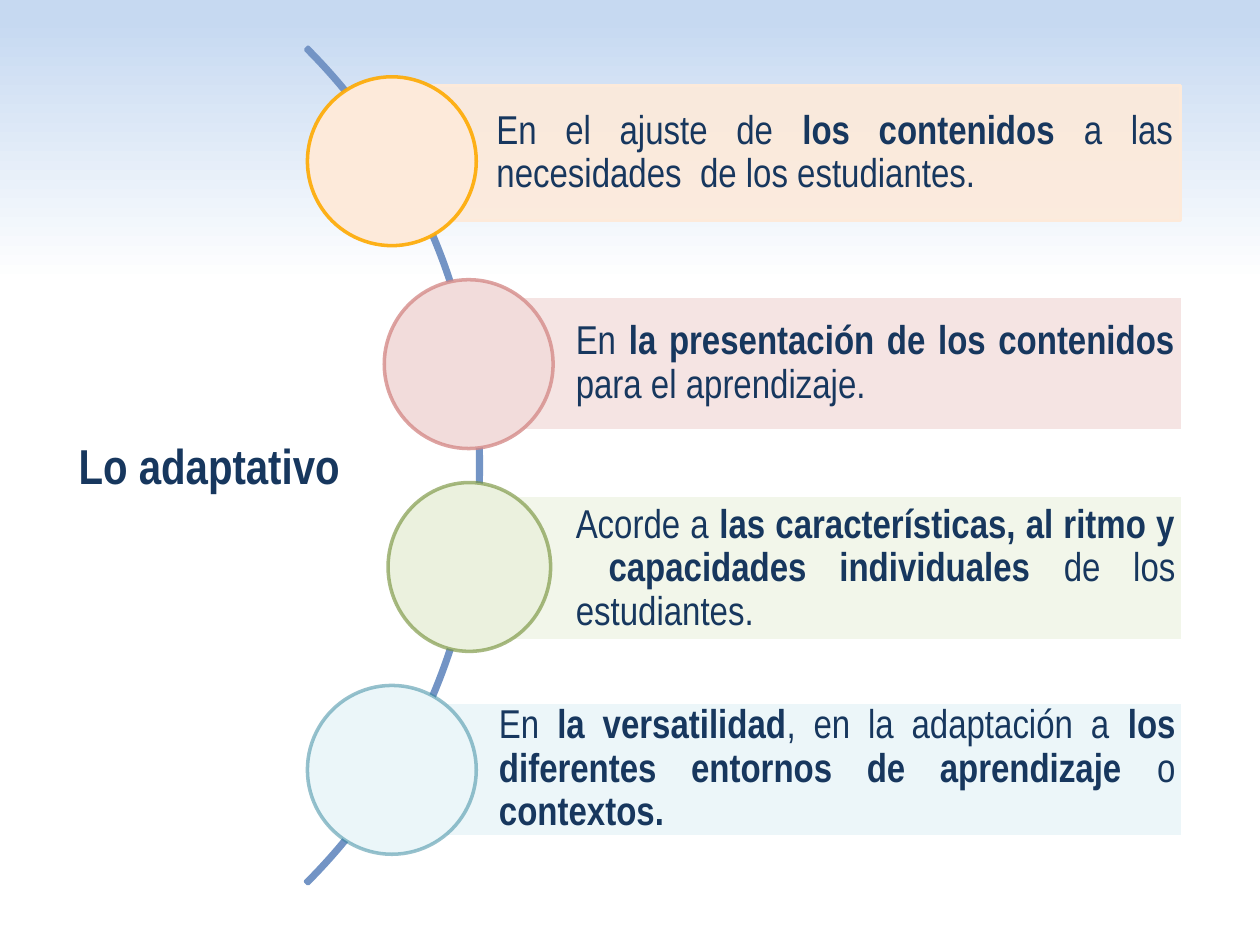
from lxml import etree
from pptx import Presentation
from pptx.dml.color import RGBColor
from pptx.enum.shapes import MSO_SHAPE
from pptx.enum.text import MSO_ANCHOR, PP_ALIGN
from pptx.oxml.ns import qn
from pptx.util import Inches, Pt

ARC, BAR, CIRCLE = MSO_SHAPE.BLOCK_ARC, MSO_SHAPE.RECTANGLE, MSO_SHAPE.OVAL
MIDDLE, BOTTOM = MSO_ANCHOR.MIDDLE, MSO_ANCHOR.BOTTOM
CENTER, JUSTIFY = PP_ALIGN.CENTER, PP_ALIGN.JUSTIFY

NAVY = RGBColor(0x17, 0x37, 0x5E)
SKY = RGBColor(0xC6, 0xD9, 0xF1)
WHITE = RGBColor(0xFF, 0xFF, 0xFF)
ARC_BLUE = RGBColor(0x73, 0x94, 0xC5)
PEACH = RGBColor(0xFD, 0xEA, 0xDA)
ORANGE = RGBColor(0xFE, 0xAA, 0x02)
PINK = RGBColor(0xF2, 0xDC, 0xDB)
RED = RGBColor(0xD4, 0x88, 0x86)
LIME = RGBColor(0xEB, 0xF1, 0xDE)
GREEN = RGBColor(0x77, 0x93, 0x3C)
ICE = RGBColor(0xDB, 0xEE, 0xF4)
PALE_ICE = RGBColor(0xEB, 0xF6, 0xF9)
TEAL = RGBColor(0x31, 0x85, 0x9C)

FIRST_CIRCLE_TOP, PITCH, DIAMETER = 0.61, 1.61, 1.34

ASPECTS = [
    dict(bar=(3.09, 0.68, 6.28, 1.07), tint=PEACH, bar_alpha=90, edge=PEACH, anchor=MIDDLE,
         circle_left=2.44, circle_width=DIAMETER, circle_fill=PEACH, ring=ORANGE, ring_alpha=90,
         pieces=["En el ajuste de ", "los contenidos ", "a las necesidades  de los estudiantes."]),
    dict(bar=(3.72, 2.35, 5.67, 1.07), tint=PINK, bar_alpha=77, edge=WHITE, anchor=MIDDLE,
         circle_left=3.05, circle_width=DIAMETER, circle_fill=PINK, ring=RED, ring_alpha=76,
         pieces=["En ", "la presentación de los contenidos ", "para el aprendizaje."]),
    dict(bar=(3.72, 3.93, 5.67, 1.16), tint=LIME, bar_alpha=63, edge=WHITE, anchor=BOTTOM,
         circle_left=3.08, circle_width=1.29, circle_fill=LIME, ring=GREEN, ring_alpha=63,
         pieces=["Acorde a ", "las características, al ritmo y  capacidades individuales ",
                 "de los estudiantes."]),
    dict(bar=(3.11, 5.57, 6.28, 1.07), tint=ICE, bar_alpha=50, edge=WHITE, anchor=MIDDLE,
         circle_left=2.44, circle_width=DIAMETER, circle_fill=PALE_ICE, ring=TEAL, ring_alpha=50,
         pieces=["En ", "la versatilidad", ", en la adaptación a ",
                 "los diferentes entornos de aprendizaje ", "o", " contextos."]),
]


class AdaptiveSlide:
    font = "Arial Narrow"
    text_color = NAVY
    line_width = Pt(2)

    def __init__(self, slide):
        self.slide = slide

    def background(self, top, bottom):
        fill = self.slide.background.fill
        fill.gradient()
        fill.gradient_angle = 270
        for stop, position, color in zip(fill.gradient_stops, (0.02, 0.3), (top, bottom)):
            stop.position = position
            stop.color.rgb = color

    def set_alpha(self, properties, percent):
        color = properties.find(qn("a:solidFill")).find(qn("a:srgbClr"))
        etree.SubElement(color, qn("a:alpha"), val=str(percent * 1000))

    def outline(self, preset, place, line, fill=None, fill_alpha=100, line_alpha=100):
        shape = self.slide.shapes.add_shape(preset, *map(Inches, place))
        shape.shadow.inherit = False
        properties = shape._element.spPr
        if fill is None:
            shape.fill.background()
        else:
            shape.fill.solid()
            shape.fill.fore_color.rgb = fill
            if fill_alpha < 100:
                self.set_alpha(properties, fill_alpha)
        shape.line.color.rgb = line
        shape.line.width = self.line_width
        if line_alpha < 100:
            self.set_alpha(properties.find(qn("a:ln")), line_alpha)
        return shape

    def arc(self, place, line):
        arc = self.outline(ARC, place, line)
        for index, value in enumerate((189, 27, 0.003)):
            arc.adjustments[index] = value

    def run(self, paragraph, text, size, bold):
        run = paragraph.add_run()
        run.text = text
        run.font.name = self.font
        run.font.size = Pt(size)
        run.font.bold = bold
        run.font.color.rgb = self.text_color

    def bar(self, place, fill, alpha, edge, anchor, pieces):
        frame = self.outline(BAR, place, edge, fill, alpha).text_frame
        frame.word_wrap = True
        frame.vertical_anchor = anchor
        frame.margin_left = Inches(0.85)
        frame.margin_top = frame.margin_right = frame.margin_bottom = Inches(0.06)
        paragraph = frame.paragraphs[0]
        paragraph.alignment = JUSTIFY
        paragraph.line_spacing = 0.9
        for index, piece in enumerate(pieces):
            self.run(paragraph, piece, 23, index % 2 == 1)

    def circle(self, place, fill, ring, alpha):
        self.outline(CIRCLE, place, ring, fill, line_alpha=alpha)

    def heading(self, place, text):
        frame = self.slide.shapes.add_textbox(*map(Inches, place)).text_frame
        frame.word_wrap = True
        paragraph = frame.paragraphs[0]
        paragraph.alignment = CENTER
        self.run(paragraph, text, 28, True)


def main():
    deck = Presentation()
    deck.slide_width, deck.slide_height = Inches(10), Inches(7.5)
    page = AdaptiveSlide(deck.slides.add_slide(deck.slide_layouts[6]))
    page.background(SKY, WHITE)
    page.arc((-5.57, -1, 9.39, 9.39), ARC_BLUE)
    for index, aspect in enumerate(ASPECTS):
        page.bar(aspect["bar"], aspect["tint"], aspect["bar_alpha"], aspect["edge"],
                 aspect["anchor"], aspect["pieces"])
        circle_top = FIRST_CIRCLE_TOP + index * PITCH
        page.circle((aspect["circle_left"], circle_top, aspect["circle_width"], DIAMETER),
                    aspect["circle_fill"], aspect["ring"], aspect["ring_alpha"])
    page.heading((0.28, 3.41, 2.76, 0.57), "Lo adaptativo")
    deck.save("out.pptx")


if __name__ == "__main__":
    main()
